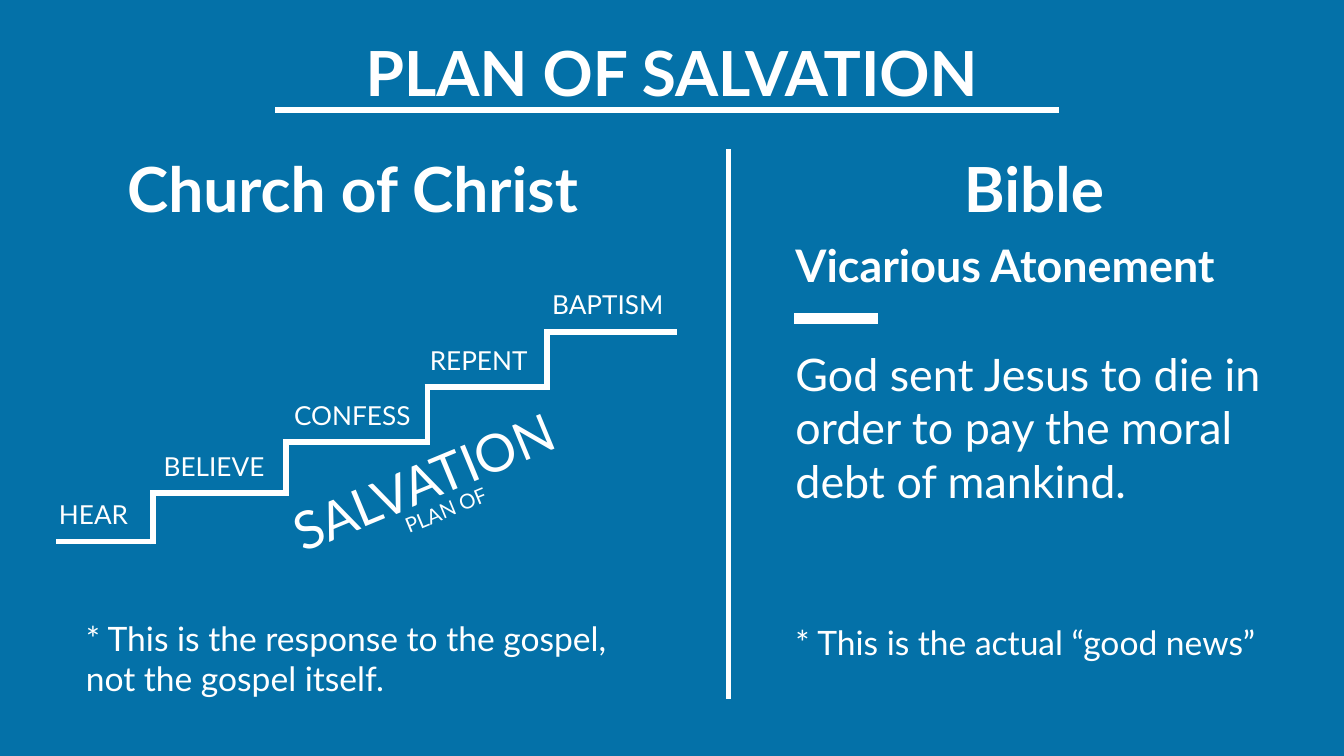
from pptx import Presentation
from pptx.dml.color import RGBColor
from pptx.enum.shapes import MSO_CONNECTOR
from pptx.enum.text import MSO_ANCHOR, PP_ALIGN
from pptx.oxml.ns import qn
from pptx.util import Inches, Pt
from lxml import etree

BLUE = RGBColor(0x04, 0x71, 0xA8)
WHITE = RGBColor(0xFF, 0xFF, 0xFF)
LEFT, CENTER = PP_ALIGN.LEFT, PP_ALIGN.CENTER
TOP, MIDDLE = MSO_ANCHOR.TOP, MSO_ANCHOR.MIDDLE
STRAIGHT = MSO_CONNECTOR.STRAIGHT

HEAD = {"size": Pt(33.3), "bold": True}
SUB = {"size": Pt(24), "bold": True}
BODY = {"size": Pt(24)}
NOTE = {"size": Pt(18)}
LABEL = {"size": Pt(14)}

# Label, its left edge and its width, from the lowest step up
STEPS = [
    ("HEAR", 0.34, 0.72),
    ("BELIEVE", 1.12, 0.96),
    ("CONFESS", 2.09, 1.08),
    ("REPENT", 3.1, 0.94),
    ("BAPTISM", 4.01, 1.04),
]
EDGES = [0.44, 1.14, 2.13, 3.18, 4.07, 5.02]
LEVELS = [4.03, 3.67, 3.29, 2.88, 2.47]
LAP = 0.02  # how far strokes run past a corner


def add_text(slide, box, paras, align=LEFT, anchor=TOP, wrap=True, turn=0):
    """Each paragraph is (text, format, space before in points)."""
    shape = slide.shapes.add_textbox(*map(Inches, box))
    shape.rotation = turn
    frame = shape.text_frame
    frame.word_wrap = wrap
    frame.vertical_anchor = anchor
    for i, (text, style, gap) in enumerate(paras):
        para = frame.add_paragraph() if i else frame.paragraphs[0]
        para.text = text
        para.alignment = align
        para.space_before = Pt(gap)
        for key, value in {"name": "Lato", **style}.items():
            setattr(para.font, key, value)
        para.font.color.rgb = WHITE


def add_line(slide, x1, y1, x2, y2, width=3):
    ends = map(Inches, (x1, y1, x2, y2))
    line = slide.shapes.add_connector(STRAIGHT, *ends)
    line.line.color.rgb = WHITE
    line.line.width = Pt(width)
    etree.SubElement(line._element.spPr, qn("a:effectLst"))


def add_stairs(slide):
    for i, ((text, left, width), y) in enumerate(zip(STEPS, LEVELS)):
        add_text(slide, (left, y - 0.37, width, 0.34), [(text, LABEL, 0)],
                 wrap=False)
        add_line(slide, EDGES[i] - LAP, y, EDGES[i + 1] + LAP, y)
        if i:
            add_line(slide, EDGES[i], LEVELS[i - 1] + LAP, EDGES[i], y - LAP)


def main():
    deck = Presentation()
    deck.slide_width = Inches(10)
    deck.slide_height = deck.slide_width * 9 // 16
    slide = deck.slides.add_slide(deck.slide_layouts[6])
    slide.background.fill.solid()
    slide.background.fill.fore_color.rgb = BLUE

    # Title and column heads
    for text, box in [
        ("PLAN OF SALVATION", (0.75, 0.25, 8.5, 0.57)),
        ("Church of Christ", (0.34, 1.11, 4.57, 0.57)),
        ("Bible", (5.91, 1.11, 3.57, 0.57)),
    ]:
        add_text(slide, box, [(text, HEAD, 0)], CENTER, MIDDLE)

    # Title rule and column divider
    add_line(slide, 2.05, 0.82, 7.88, 0.82)
    add_line(slide, 5.42, 1.11, 5.42, 5.2)

    # Left column: stairs with slanted words below
    add_stairs(slide)
    for text, size, box in [
        ("SALVATION", 28, (2.02, 3.27, 2.38, 0.57)),
        ("PLAN OF", 11, (2.9, 3.65, 0.85, 0.29)),
    ]:
        add_text(slide, box, [(text, {"size": Pt(size)}, 0)],
                 wrap=False, turn=337.5)

    # Right column: doctrine with a short accent bar
    add_text(slide, (5.82, 1.72, 4.18, 2.58), [
        ("Vicarious Atonement", SUB, 0),
        ("God sent Jesus to die in order to pay the moral debt of mankind.",
         BODY, 29.4),
    ])
    add_line(slide, 5.91, 2.37, 6.53, 2.37, 6)

    # Footnotes
    for text, left, top in [
        ("* This is the response to the gospel, \vnot the gospel itself.",
         0.54, 4.29),
        ("* This is the actual “good news”", 5.82, 4.17),
    ]:
        add_text(slide, (left, top, 4.18, 1.21), [(text, NOTE, 0)],
                 anchor=MIDDLE)

    deck.save("out.pptx")


if __name__ == "__main__":
    main()
